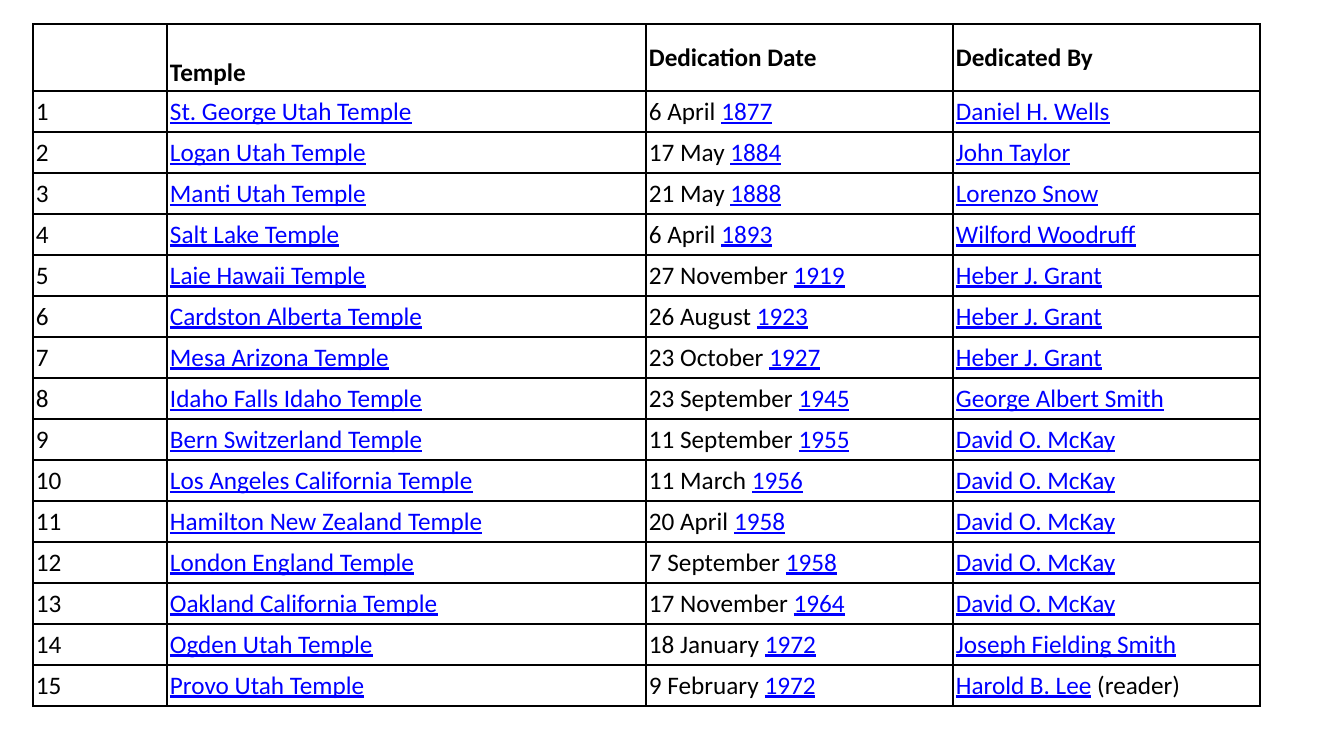
"""Build a slide listing fifteen temples with their dedication dates and dedicators."""
from dataclasses import dataclass

from lxml import etree
from pptx import Presentation
from pptx import util as u
from pptx.dml import color
from pptx.enum import text
from pptx.oxml import ns

SCALE = 914400 / 100.8
COLORS = {"ink": "000000", "link": "0000FF"}
FONT = "Calibri"
COLS = (134, 479, 307, 307)
LEFT, TOP, HEAD, ROW, INSET = 33, 24, 67, 41, 3
SPLIT = 7


@dataclass
class Part:
    words: str
    link: bool = False
    bold: bool = False


@dataclass
class Temple:
    name: str
    day: str
    year: str
    leader: str
    note: str = ""


TEMPLES = [
    Temple("St. George Utah Temple", "6 April", "1877", "Daniel H. Wells"),
    Temple("Logan Utah Temple", "17 May", "1884", "John Taylor"),
    Temple("Manti Utah Temple", "21 May", "1888", "Lorenzo Snow"),
    Temple("Salt Lake Temple", "6 April", "1893", "Wilford Woodruff"),
    Temple("Laie Hawaii Temple", "27 November", "1919", "Heber J. Grant"),
    Temple("Cardston Alberta Temple", "26 August", "1923", "Heber J. Grant"),
    Temple("Mesa Arizona Temple", "23 October", "1927", "Heber J. Grant"),
    Temple("Idaho Falls Idaho Temple", "23 September", "1945", "George Albert Smith"),
    Temple("Bern Switzerland Temple", "11 September", "1955", "David O. McKay"),
    Temple("Los Angeles California Temple", "11 March", "1956", "David O. McKay"),
    Temple("Hamilton New Zealand Temple", "20 April", "1958", "David O. McKay"),
    Temple("London England Temple", "7 September", "1958", "David O. McKay"),
    Temple("Oakland California Temple", "17 November", "1964", "David O. McKay"),
    Temple("Ogden Utah Temple", "18 January", "1972", "Joseph Fielding Smith"),
    Temple("Provo Utah Temple", "9 February", "1972", "Harold B. Lee", " (reader)"),
]


def px(size: int) -> int:
    return round(size * SCALE)


def edge(cell) -> None:
    props = cell._tc.get_or_add_tcPr()
    for side in ("lnL", "lnR", "lnT", "lnB"):
        line = etree.SubElement(props, ns.qn(f"a:{side}"), w=str(u.Pt(1)))
        fill = etree.SubElement(line, ns.qn("a:solidFill"))
        etree.SubElement(fill, ns.qn("a:srgbClr"), val=COLORS["ink"])


def write(cell, parts: list[Part]) -> None:
    edge(cell)
    cell.fill.background()
    cell.vertical_anchor = text.MSO_ANCHOR.MIDDLE
    cell.margin_left = cell.margin_right = px(INSET)
    cell.margin_top = cell.margin_bottom = px(INSET)
    para = cell.text_frame.paragraphs[0]
    for part in parts:
        run = para.add_run()
        run.text = part.words
        font = run.font
        font.name, font.size = FONT, u.Pt(18)
        font.bold, font.underline = part.bold, part.link
        shade = COLORS["link" if part.link else "ink"]
        font.color.rgb = color.RGBColor.from_string(shade)


def entry(count: int, temple: Temple) -> list[list[Part]]:
    leader = [Part(temple.leader, link=True)]
    if temple.note:
        leader.append(Part(temple.note))
    return [
        [Part(str(count))],
        [Part(temple.name, link=True)],
        [Part(f"{temple.day} "), Part(temple.year, link=True)],
        leader,
    ]


def draw(slide, top: int, rows: list[list[list[Part]]], highs: list[int]):
    frame = slide.shapes.add_table(
        len(rows), len(COLS), px(LEFT), px(top), px(sum(COLS)), px(sum(highs)))
    table = frame.table
    table.first_row = table.horz_banding = False
    for col, wide in zip(table.columns, COLS):
        col.width = px(wide)
    for line, high, row in zip(table.rows, highs, rows):
        line.height = px(high)
        for cell, parts in zip(line.cells, row):
            write(cell, parts)
    return table


def main() -> None:
    deck = Presentation()
    deck.slide_width, deck.slide_height = px(1344), px(756)
    slide = deck.slides.add_slide(deck.slide_layouts[6])
    titles = ("Temple", "Dedication Date", "Dedicated By")
    head = [[]] + [[Part(title, bold=True)] for title in titles]
    rows = [entry(count, temple) for count, temple in enumerate(TEMPLES, 1)]
    early, later = rows[:SPLIT], rows[SPLIT:]
    highs = [HEAD] + [ROW] * len(early)
    table = draw(slide, TOP, [head] + early, highs)
    table.cell(0, 1).vertical_anchor = text.MSO_ANCHOR.BOTTOM
    draw(slide, TOP + sum(highs), later, [ROW] * len(later))
    deck.save("out.pptx")


if __name__ == "__main__":
    main()
